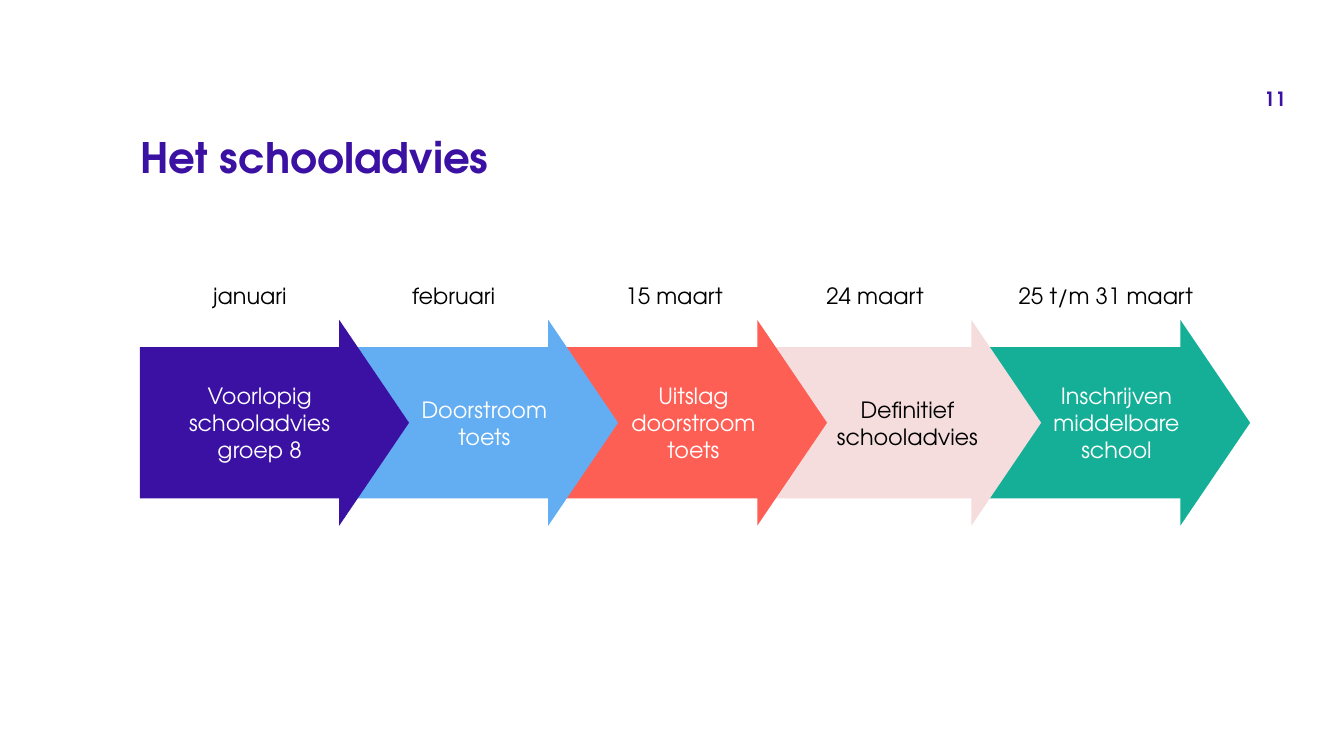
from pptx import Presentation
from pptx.dml.color import RGBColor
from pptx.enum.shapes import MSO_SHAPE
from pptx.enum.text import MSO_ANCHOR, PP_ALIGN
from pptx.util import Pt

ARROW = MSO_SHAPE.RIGHT_ARROW
TOP, MIDDLE = MSO_ANCHOR.TOP, MSO_ANCHOR.MIDDLE
LEFT, CENTER = PP_ALIGN.LEFT, PP_ALIGN.CENTER
FONT = "TeX Gyre Adventor"
COLORS = {
    "indigo": "3B11A3",
    "blue": "63ADF2",
    "coral": "FE5F55",
    "pink": "F5DDDD",
    "green": "15AF97",
    "white": "FFFFFF",
    "black": "000000",
}


def write(shape, text, size, color, align, anchor, insets, bold=False, spacing=1.0):
    frame = shape.text_frame
    frame.word_wrap = True
    frame.vertical_anchor = anchor
    frame.margin_left, frame.margin_top, frame.margin_right, frame.margin_bottom = map(Pt, insets)
    paragraph = frame.paragraphs[0]
    paragraph.text = text
    paragraph.alignment = align
    paragraph.line_spacing = spacing
    paragraph.font.name = FONT
    paragraph.font.size = Pt(size)
    paragraph.font.bold = bold
    paragraph.font.color.rgb = RGBColor.from_string(COLORS[color])


prs = Presentation()
prs.slide_width, prs.slide_height = Pt(960), Pt(540)
slide = prs.slides.add_slide(prs.slide_layouts[5])

heading = slide.shapes.title
heading.left, heading.top, heading.width, heading.height = Pt(100), Pt(98), Pt(760), Pt(55)
write(heading, "Het schooladvies", 30, "indigo", LEFT, TOP, (0, 0, 0, 0), True, 0.9)

page_number = slide.shapes.add_textbox(Pt(903), Pt(56), Pt(50), Pt(29))
write(page_number, "11", 14, "indigo", LEFT, MIDDLE, (0, 3.6, 7.2, 3.6), True)

steps = [
    (100, 100, "januari", "Voorlopig\vschooladvies\vgroep 8", "indigo", "white", 22.5),
    (249.3, 245.5, "februari", "Doorstroom\vtoets", "blue", "white", 45),
    (398.6, 403, "15 maart", "Uitslag\vdoorstroom\vtoets", "coral", "white", 45),
    (551.5, 546.5, "24 maart", "Definitief\vschooladvies", "pink", "black", 45),
    (700.8, 711.4, "25 t/m 31 maart", "Inschrijven\vmiddelbare\vschool", "green", "white", 45),
]

for arrow_left, date_left, date, step, fill, ink, inset in reversed(steps):
    arrow = slide.shapes.add_shape(ARROW, Pt(arrow_left), Pt(228.5), Pt(192.2), Pt(147))
    arrow.adjustments[0] = 0.735
    arrow.adjustments[1] = 0.339
    arrow.shadow.inherit = False
    arrow.fill.solid()
    arrow.fill.fore_color.rgb = RGBColor.from_string(COLORS[fill])
    arrow.line.fill.background()
    write(arrow, step, 16, ink, CENTER, MIDDLE, (inset, 3.6, 7.2, 3.6))

    month = slide.shapes.add_textbox(Pt(date_left), Pt(203.8), Pt(157), Pt(21.6))
    write(month, date, 16, "black", CENTER, TOP, (0, 0, 0, 0), spacing=0.9)

prs.save("out.pptx")
